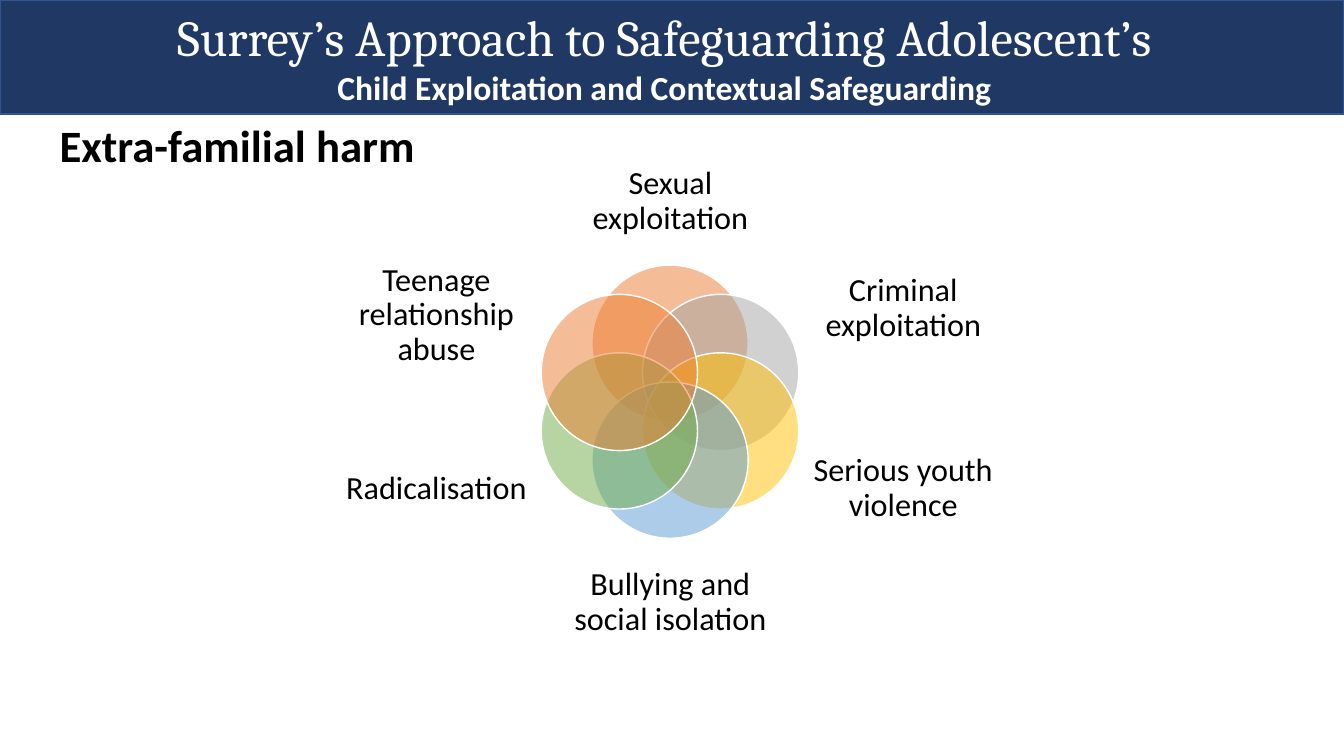
import math
from dataclasses import dataclass

from pptx import Presentation
from pptx.dml.color import RGBColor
from pptx.enum import shapes, text
from pptx.oxml import ns
from pptx.util import Inches, Pt
from lxml import etree


@dataclass(frozen=True)
class Theme:
    body: str = "Calibri"
    serif: str = "Cambria"
    navy: str = "203864"
    edge: str = "325491"
    white: str = "FFFFFF"
    black: str = "000000"
    orange: str = "ED7D31"
    grey: str = "A5A5A5"
    gold: str = "FFC000"
    blue: str = "5B9BD5"
    green: str = "70AD47"
    head: int = 36
    title: int = 32
    sub: int = 24
    label: int = 23


THEME = Theme()
HUB_X, HUB_Y = 6.645, 3.985   # centre of the ring
RING, SIZE = 0.58, 1.55       # ring radius, circle diameter

# Clockwise from the top: label, colour, label box (left, top, width, height)
HARMS = [
    ("Sexual exploitation", THEME.orange, (5.68, 1.47, 1.94, 1.06)),
    ("Criminal exploitation", THEME.grey, (8.04, 2.48, 1.84, 1.16)),
    ("Serious youth violence", THEME.gold, (8.04, 4.2, 1.84, 1.3)),
    ("Bullying and social isolation", THEME.blue, (5.68, 5.45, 1.94, 1.06)),
    ("Radicalisation", THEME.green, (3.41, 4.2, 1.84, 1.3)),
    ("Teenage relationship abuse", THEME.orange, (3.41, 2.48, 1.84, 1.3)),
]


def style(para, size, color, font=THEME.body, bold=False):
    for run in para.runs:
        run.font.name = font
        run.font.size = Pt(size)
        run.font.bold = bold
        run.font.color.rgb = RGBColor.from_string(color)


def add_form(slide, kind, box, fill, line):
    form = slide.shapes.add_shape(kind, *map(Inches, box))
    form.shadow.inherit = False
    form.fill.solid()
    form.fill.fore_color.rgb = RGBColor.from_string(fill)
    form.line.color.rgb = RGBColor.from_string(line)
    form.line.width = Pt(1)
    return form


def add_circle(slide, step, color):
    angle = math.radians(60 * step)
    left = HUB_X + RING * math.sin(angle) - SIZE / 2
    top = HUB_Y - RING * math.cos(angle) - SIZE / 2
    disc = add_form(slide, shapes.MSO_SHAPE.OVAL, (left, top, SIZE, SIZE),
                    color, THEME.white)
    # Half-transparent fill
    tint = disc.fill._xPr.find(ns.qn("a:solidFill"))[0]
    etree.SubElement(tint, ns.qn("a:alpha")).set("val", "50000")


def add_label(slide, words, box):
    frame = slide.shapes.add_textbox(*map(Inches, box)).text_frame
    frame.word_wrap = True
    frame.vertical_anchor = text.MSO_ANCHOR.MIDDLE
    frame.margin_left = frame.margin_right = 0
    frame.margin_top = frame.margin_bottom = 0
    frame.text = words
    para = frame.paragraphs[0]
    para.alignment = text.PP_ALIGN.CENTER
    para.line_spacing = 0.9
    style(para, THEME.label, THEME.black)


def set_title(slide, words):
    title = slide.shapes.title
    title.left, title.top = Inches(0.49), Inches(1.03)
    title.width, title.height = Inches(9), Inches(0.88)
    frame = title.text_frame
    frame.text = words
    frame.vertical_anchor = text.MSO_ANCHOR.MIDDLE
    para = frame.paragraphs[0]
    para.alignment = text.PP_ALIGN.LEFT
    para.line_spacing = 0.9
    style(para, THEME.title, THEME.black, bold=True)


def add_banner(slide, head, sub):
    band = add_form(slide, shapes.MSO_SHAPE.RECTANGLE, (0, 0, 13.33, 1.13),
                    THEME.navy, THEME.edge)
    frame = band.text_frame
    frame.word_wrap = True
    frame.vertical_anchor = text.MSO_ANCHOR.MIDDLE
    frame.margin_right = Inches(0.25)
    frame.text = f"{head}\n{sub}"
    for para in frame.paragraphs:
        para.alignment = text.PP_ALIGN.CENTER
    style(frame.paragraphs[0], THEME.head, THEME.white, THEME.serif)
    style(frame.paragraphs[1], THEME.sub, THEME.white, bold=True)


def main():
    deck = Presentation()
    deck.slide_width, deck.slide_height = Inches(13.33), Inches(7.5)
    slide = deck.slides.add_slide(deck.slide_layouts[5])

    set_title(slide, "Extra-familial harm")

    # Ring of overlapping harms
    for step, (words, color, box) in enumerate(HARMS):
        add_circle(slide, step, color)
        add_label(slide, words, box)

    # Top banner
    add_banner(slide, "Surrey’s Approach to Safeguarding Adolescent’s",
               "Child Exploitation and Contextual Safeguarding")
    deck.save("out.pptx")


if __name__ == "__main__":
    main()
